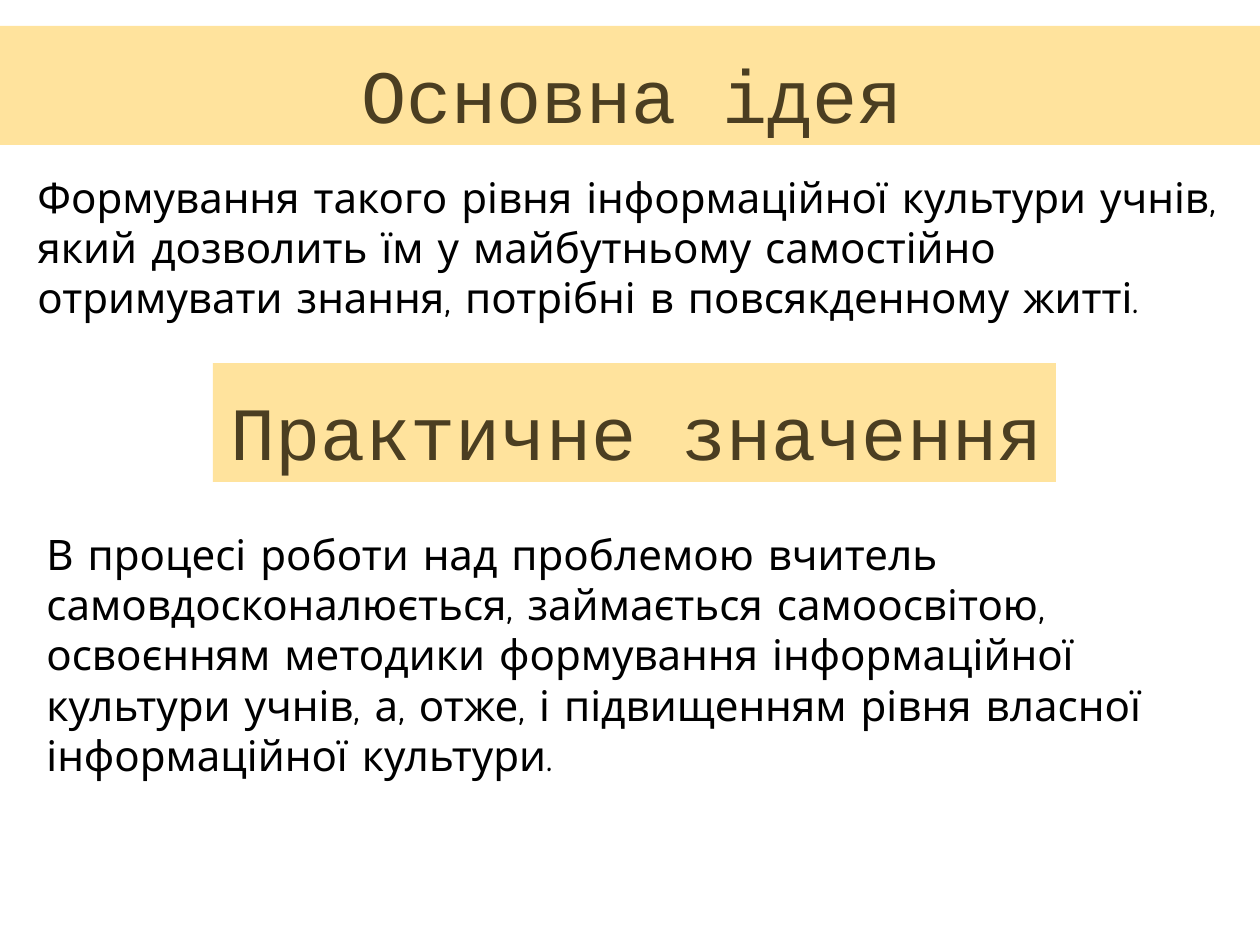
from pptx import Presentation
from pptx import util as u
from pptx.dml.color import RGBColor
from pptx.enum import shapes, text

PX_PER_INCH = 126
SLIDE_SIZE = (1260, 945)

THEME = {
    "band": "FFE39D",
    "heading": {"name": "Courier New", "size": 43, "color": "4B3E21"},
    "body": {"name": "Comic Neue", "size": 24, "color": "000000"},
}

# Each section: heading, heading box, body, body box (left, top, width, height in px)
SECTIONS = [
    ("Основна ідея", (0, 26, 1260, 119),
     "Формування такого рівня інформаційної культури учнів, який дозволить їм "
     "у майбутньому самостійно отримувати знання, потрібні в повсякденному житті.",
     (25, 165, 1226, 164)),
    ("Практичне значення", (213, 363, 843, 119),
     "В процесі роботи над проблемою вчитель самовдосконалюється, займається "
     "самоосвітою, освоєнням методики формування інформаційної культури учнів, "
     "а, отже, і підвищенням рівня власної інформаційної культури.",
     (34, 522, 1181, 265)),
]

HEADING_FRAME = {
    "word_wrap": True,
    "auto_size": text.MSO_AUTO_SIZE.NONE,
    "vertical_anchor": text.MSO_ANCHOR.BOTTOM,
    "margin_left": u.Inches(0.1),
    "margin_right": u.Inches(0.1),
    "margin_top": 0,
    "margin_bottom": u.Inches(0.05),
}
BODY_FRAME = {"word_wrap": True, "auto_size": text.MSO_AUTO_SIZE.SHAPE_TO_FIT_TEXT}
HEADING_INDENT = u.Inches(0.03)


def px(length):
    return u.Emu(round(length * u.Inches(1) / PX_PER_INCH))


def place(shape, box):
    for name, length in zip(("left", "top", "width", "height"), box):
        setattr(shape, name, px(length))


def write(shape, words, frame_format, style, alignment):
    frame = shape.text_frame
    for name, value in frame_format.items():
        setattr(frame, name, value)
    paragraph = frame.paragraphs[0]
    paragraph.alignment = alignment
    run = paragraph.add_run()
    run.text = words
    run.font.name = style["name"]
    run.font.size = u.Pt(style["size"])
    run.font.color.rgb = RGBColor.from_string(style["color"])
    return paragraph


def add_heading(shape, words, box):
    place(shape, box)
    shape.fill.solid()
    shape.fill.fore_color.rgb = RGBColor.from_string(THEME["band"])
    shape.line.fill.background()
    paragraph = write(shape, words, HEADING_FRAME, THEME["heading"], text.PP_ALIGN.CENTER)
    properties = paragraph._p.get_or_add_pPr()
    properties.set("marL", str(HEADING_INDENT))
    properties.set("indent", "0")


def main():
    presentation = Presentation()
    presentation.slide_width, presentation.slide_height = map(px, SLIDE_SIZE)
    slide = presentation.slides.add_slide(presentation.slide_layouts.get_by_name("Title Only"))

    for index, (heading, heading_box, body, body_box) in enumerate(SECTIONS):
        if index == 0:
            band = slide.shapes.title
        else:
            band = slide.shapes.add_shape(shapes.MSO_SHAPE.RECTANGLE, *map(px, heading_box))
            band.shadow.inherit = False
        add_heading(band, heading, heading_box)
        body_shape = slide.shapes.add_textbox(*map(px, body_box))
        write(body_shape, body, BODY_FRAME, THEME["body"], text.PP_ALIGN.LEFT)

    presentation.save("out.pptx")


if __name__ == "__main__":
    main()
